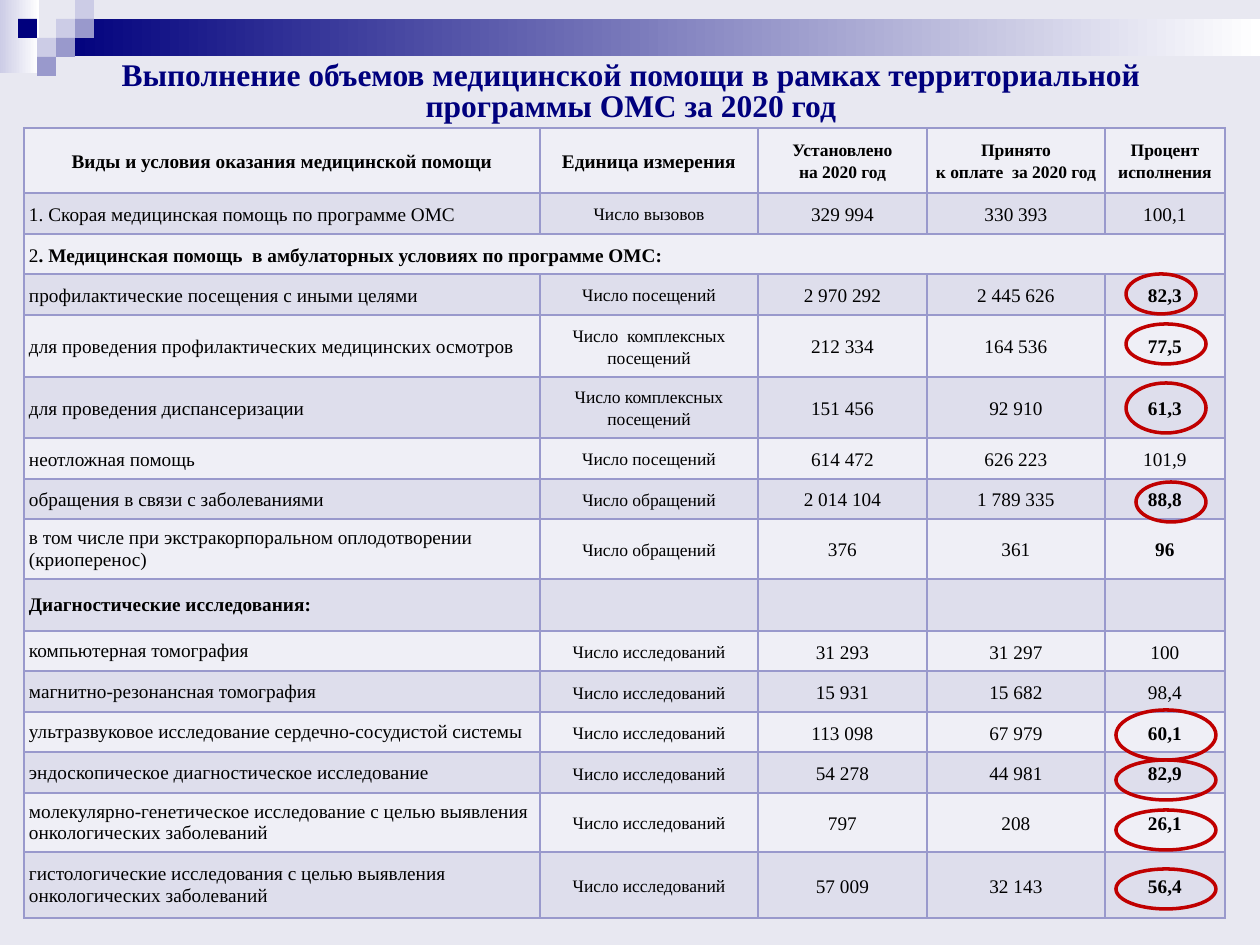
from lxml import etree
from pptx import Presentation
from pptx import util as u
from pptx.dml.color import RGBColor
from pptx.enum import shapes, text
from pptx.oxml import ns

SCALE = 914400 / 126
FONT = "Times New Roman"
NAVY = RGBColor(0x00, 0x00, 0x7D)
LAVENDER = RGBColor(0xCC, 0xCC, 0xE6)
VIOLET = RGBColor(0x99, 0x99, 0xCC)
WHITE = RGBColor(0xFF, 0xFF, 0xFF)
BLACK = RGBColor(0x00, 0x00, 0x00)
RED = RGBColor(0xC0, 0x00, 0x00)
BACKGROUND = RGBColor(0xE8, 0xE8, 0xF1)
BANDS = (RGBColor(0xEF, 0xEF, 0xF6), RGBColor(0xDE, 0xDE, 0xEC))

TITLE = "Выполнение объемов медицинской помощи в рамках территориальной программы ОМС за 2020 год"
COLUMN_WIDTHS = (516, 218, 169, 178, 120)
ROW_HEIGHTS = (65, 41, 40, 41, 62, 61, 41, 40, 60, 52, 40, 41, 40, 41, 59, 66)
HEADER = ("Виды и условия оказания медицинской помощи", "Единица измерения",
          "Установлено\nна 2020 год", "Принято\nк оплате  за 2020 год", "Процент исполнения")
OUTPATIENT = (("2", False), (". Медицинская помощь  в амбулаторных условиях по программе ОМС:", True))
DIAGNOSTICS = "Диагностические исследования:"
CALLS = "Число вызовов"
VISITS = "Число посещений"
REQUESTS = "Число обращений"
STUDIES = "Число исследований"
OUTPATIENT_ROW, DIAGNOSTICS_ROW = 2, 9
SERVICES = {
    1: ("1. Скорая медицинская помощь по программе ОМС", CALLS, "329 994", "330 393", "100,1"),
    3: ("профилактические посещения с иными целями", VISITS, "2 970 292", "2 445 626", "82,3"),
    4: ("для проведения профилактических медицинских осмотров",
        "Число  комплексных\nпосещений", "212 334", "164 536", "77,5"),
    5: ("для проведения диспансеризации",
        "Число комплексных\nпосещений", "151 456", "92 910", "61,3"),
    6: ("неотложная помощь", VISITS, "614 472", "626 223", "101,9"),
    7: ("обращения в связи с заболеваниями", REQUESTS, "2 014 104", "1 789 335", "88,8"),
    8: ("в том числе при экстракорпоральном оплодотворении (криоперенос)",
        REQUESTS, "376", "361", "96"),
    10: ("компьютерная томография", STUDIES, "31 293", "31 297", "100"),
    11: ("магнитно-резонансная томография", STUDIES, "15 931", "15 682", "98,4"),
    12: ("ультразвуковое исследование сердечно-сосудистой системы",
         STUDIES, "113 098", "67 979", "60,1"),
    13: ("эндоскопическое диагностическое исследование", STUDIES, "54 278", "44 981", "82,9"),
    14: ("молекулярно-генетическое исследование с целью выявления онкологических заболеваний",
         STUDIES, "797", "208", "26,1"),
    15: ("гистологические исследования с целью выявления онкологических заболеваний",
         STUDIES, "57 009", "32 143", "56,4"),
}
LOW_PERCENT = 97
HIGHLIGHTS = ((1102, 146, 70, 40), (1102, 196, 80, 40), (1102, 255, 80, 50), (1112, 354, 70, 40),
              (1092, 582, 100, 50), (1092, 632, 100, 40), (1092, 682, 100, 40), (1092, 741, 100, 40))


def px(length):
    return u.Emu(round(length * SCALE))


def write(frame, content, size=11, bold=False, color=BLACK,
          align=text.PP_ALIGN.CENTER, spacing=1.15):
    lines = [((line, bold),) for line in content.split("\n")] if isinstance(content, str) else [content]
    for index, line in enumerate(lines):
        paragraph = frame.add_paragraph() if index else frame.paragraphs[0]
        paragraph.alignment = align
        paragraph.line_spacing = spacing
        for words, is_bold in line:
            run = paragraph.add_run()
            run.text = words
            run.font.name = FONT
            run.font.size = u.Pt(size)
            run.font.bold = is_bold
            run.font.color.rgb = color


def add_shape(slide, kind, box):
    shape = slide.shapes.add_shape(kind, *map(px, box))
    shape.shadow.inherit = False
    return shape


def add_block(slide, box, *colors):
    shape = add_shape(slide, shapes.MSO_SHAPE.RECTANGLE, box)
    shape.line.fill.background()
    if len(colors) == 1:
        shape.fill.solid()
        shape.fill.fore_color.rgb = colors[0]
    else:
        shape.fill.gradient()
        shape.fill.gradient_angle = 0
        for stop, color, position in zip(shape.fill.gradient_stops, colors, (0, 1)):
            stop.color.rgb = color
            stop.position = position


def add_banner(slide, box):
    left, top, width, height = box
    step = 19
    add_block(slide, (left, top, 39, height), LAVENDER, WHITE)
    add_block(slide, (left + 57, top + step, width - 57, 2 * step - 1), NAVY, WHITE)
    squares = ((2, 1, LAVENDER), (3, 0, LAVENDER), (3, 1, VIOLET), (1, 2, LAVENDER),
               (0, 1, NAVY), (2, 2, VIOLET), (1, 3, VIOLET))
    for column, row, color in squares:
        add_block(slide, (left + 18 + column * step, top + row * step, step, step), color)


def add_title(slide, box):
    title = slide.shapes.title
    title.left, title.top, title.width, title.height = map(px, box)
    title.text_frame.word_wrap = True
    title.text_frame.auto_size = text.MSO_AUTO_SIZE.NONE
    title.text_frame.vertical_anchor = text.MSO_ANCHOR.MIDDLE
    write(title.text_frame, TITLE, size=18, bold=True, color=NAVY, spacing=0.8)


def style_cell(cell, color):
    cell.margin_left = cell.margin_right = px(5)
    cell.margin_top = cell.margin_bottom = px(7)
    cell.vertical_anchor = text.MSO_ANCHOR.MIDDLE
    properties = cell._tc.get_or_add_tcPr()
    for side in ("a:lnL", "a:lnR", "a:lnT", "a:lnB"):
        line = etree.SubElement(properties, ns.qn(side), w=str(u.Pt(1)))
        fill = etree.SubElement(line, ns.qn("a:solidFill"))
        etree.SubElement(fill, ns.qn("a:srgbClr"), val=str(VIOLET))
    cell.fill.solid()
    cell.fill.fore_color.rgb = color


def add_volume_table(slide, box):
    frame = slide.shapes.add_table(len(ROW_HEIGHTS), len(COLUMN_WIDTHS), *map(px, box))
    table = frame.table
    table.first_row = table.horz_banding = False
    for column, width in zip(table.columns, COLUMN_WIDTHS):
        column.width = px(width)
    for index, (row, height) in enumerate(zip(table.rows, ROW_HEIGHTS)):
        row.height = px(height)
        for cell in row.cells:
            style_cell(cell, BANDS[index % 2])

    for column, label in enumerate(HEADER):
        write(table.cell(0, column).text_frame, label, size=11 if column < 2 else 10, bold=True)
    table.cell(OUTPATIENT_ROW, 0).merge(table.cell(OUTPATIENT_ROW, len(HEADER) - 1))
    left = text.PP_ALIGN.LEFT
    write(table.cell(OUTPATIENT_ROW, 0).text_frame, OUTPATIENT, align=left)
    write(table.cell(DIAGNOSTICS_ROW, 0).text_frame, DIAGNOSTICS, bold=True, align=left, spacing=1.0)

    for row, (service, unit, planned, accepted, percent) in SERVICES.items():
        frames = [table.cell(row, column).text_frame for column in range(len(HEADER))]
        write(frames[0], service, align=left, spacing=1.15 if row < 8 else 1.0)
        write(frames[1], unit, size=10)
        write(frames[2], planned)
        write(frames[3], accepted)
        write(frames[4], percent, bold=float(percent.replace(",", ".")) < LOW_PERCENT)


def add_highlights(slide, box):
    for left, top, width, height in HIGHLIGHTS:
        ellipse = add_shape(slide, shapes.MSO_SHAPE.OVAL, (box[0] + left, box[1] + top, width, height))
        ellipse.fill.background()
        ellipse.line.color.rgb = RED
        ellipse.line.width = u.Pt(2)


def main():
    presentation = Presentation()
    presentation.slide_width, presentation.slide_height = px(1260), px(945)
    slide = presentation.slides.add_slide(presentation.slide_layouts[5])
    slide.background.fill.solid()
    slide.background.fill.fore_color.rgb = BACKGROUND
    table_box = (24, 128, sum(COLUMN_WIDTHS), sum(ROW_HEIGHTS))
    add_banner(slide, (0, 0, 1260, 73))
    add_title(slide, (64, 37, 1134, 112))
    add_volume_table(slide, table_box)
    add_highlights(slide, table_box)
    presentation.save("out.pptx")


if __name__ == "__main__":
    main()
